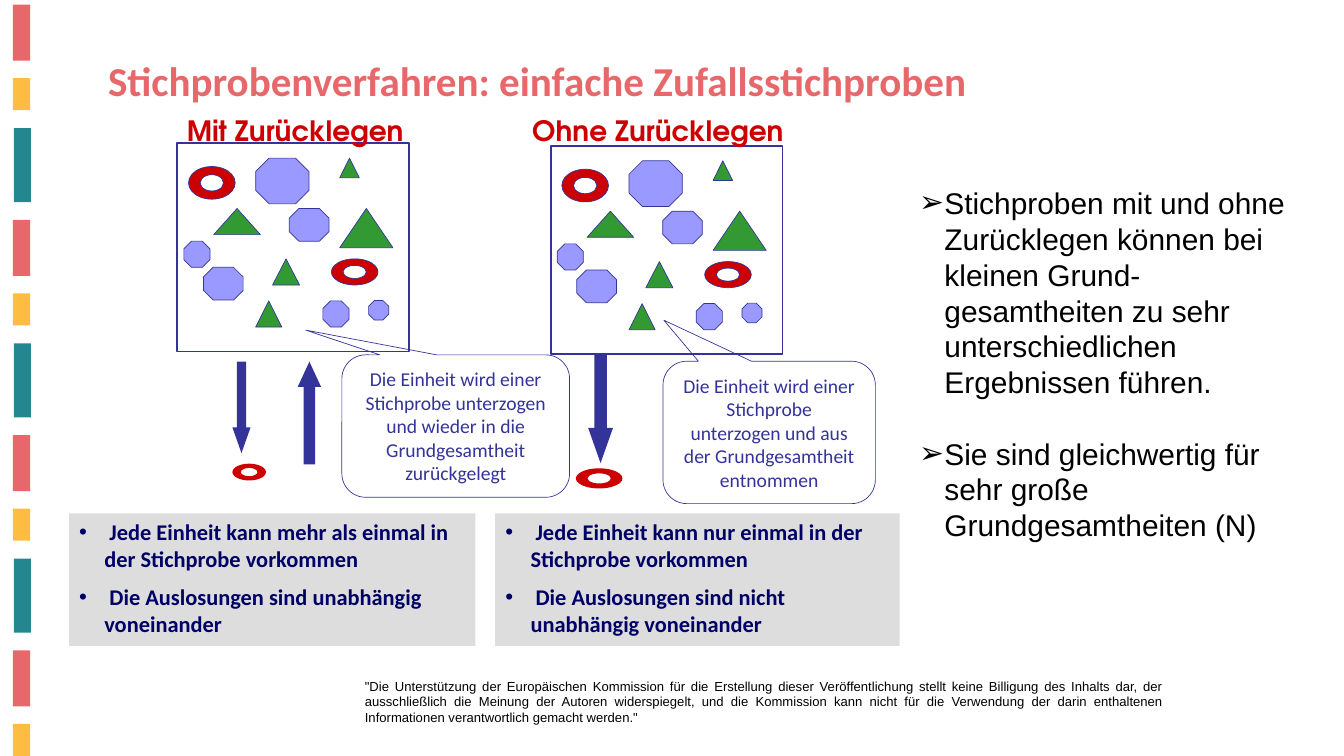
from pptx import Presentation
from pptx.dml.color import RGBColor
from pptx.enum.shapes import MSO_SHAPE as SHAPE
from pptx.enum.text import MSO_ANCHOR as ANCHOR, PP_ALIGN as ALIGN
from pptx.oxml.ns import qn
from pptx.util import Pt
from lxml import etree

CORAL, YELLOW, TEAL = "E8676A", "FDBD40", "238791"
INDIGO, NAVY, RED, GREEN, LILAC = "333399", "000066", "CC0000", "339933", "9999FF"

# Population units relative to its frame: left, top, width, height
TRIANGLES = [(102, 124, 29, 28), (39, 70, 50, 28), (84, 169, 28, 28),
             (174, 70, 57, 42), (174, 16, 21, 21)]
OCTAGONS = [(28, 133, 42.5, 35), (120, 70, 42.5, 35), (156, 169, 28, 28),
            (205, 168.5, 21.5, 21), (84, 16, 57, 49), (7, 105, 28, 28)]
RINGS = [(165, 124, 50, 28), (12, 25, 50, 35)]


def rgb(value):
    return RGBColor.from_string(value)


def paint(sp, fill=None, line=None, width=0.75):
    sp.shadow.inherit = False
    if fill:
        sp.fill.solid()
        sp.fill.fore_color.rgb = rgb(fill)
    else:
        sp.fill.background()
    if line:
        sp.line.color.rgb = rgb(line)
        sp.line.width = Pt(width)
    else:
        sp.line.fill.background()
    return sp


def add_shape(shapes, kind, box, fill=None, line=None, width=0.75, adj=()):
    sp = shapes.add_shape(kind, *map(Pt, box))
    for i, value in enumerate(adj):
        sp.adjustments[i] = value
    return paint(sp, fill, line, width)


def add_ring(shapes, box, line=None):
    """Ellipse with a concentric hole of half its size."""
    x, y, w, h = box
    rx, ry = w / 2, h / 2

    def quarters(scale, turn):
        steps = [(1, 0), (0, turn), (-1, 0), (0, -turn), (1, 0)]
        return [(Pt(x + rx + scale * rx * i), Pt(y + ry + scale * ry * j))
                for i, j in steps]

    outer, inner = quarters(1, 1), quarters(0.5, -1)
    fb = shapes.build_freeform(*outer[0])
    fb.add_line_segments(outer[1:], close=True)
    fb.move_to(*inner[0])
    fb.add_line_segments(inner[1:], close=True)
    sp = fb.convert_to_shape()
    # Bend the four sides of each contour into quarter arcs
    for i, side in enumerate(list(sp._element.iter(qn("a:lnTo")))):
        scale, turn = (1, 1) if i < 4 else (0.5, -1)
        arc = etree.Element(qn("a:arcTo"), wR=str(Pt(rx * scale)), hR=str(Pt(ry * scale)),
                            stAng=str(turn * i % 4 * 5400000), swAng=str(turn * 5400000))
        side.getparent().replace(side, arc)
    return paint(sp, RED, line)


def add_bullet(p, char, color, indent=27):
    pPr = p._p.get_or_add_pPr()
    pPr.set("marL", str(Pt(indent)))
    pPr.set("indent", str(-Pt(indent)))
    clr = etree.SubElement(pPr, qn("a:buClr"))
    etree.SubElement(clr, qn("a:srgbClr")).set("val", color)
    etree.SubElement(pPr, qn("a:buFont")).set("typeface", "Arial")
    etree.SubElement(pPr, qn("a:buChar")).set("char", char)


def write(sp, lines, font, size, color, bold=False, align=ALIGN.LEFT,
          inset=(7.2, 3.6), bullet=None, gap=0, anchor=ANCHOR.TOP):
    tf = sp.text_frame
    tf.word_wrap = True
    tf.vertical_anchor = anchor
    tf.margin_left = tf.margin_right = Pt(inset[0])
    tf.margin_top = tf.margin_bottom = Pt(inset[1])
    for i, line in enumerate(lines):
        p = tf.add_paragraph() if i else tf.paragraphs[0]
        p.text = line
        p.alignment = align
        if i:
            p.space_before = Pt(gap)
        if bullet:
            add_bullet(p, bullet, color)
        f = p.runs[0].font
        f.name, f.size, f.bold, f.color.rgb = font, Pt(size), bold, rgb(color)


def add_text(shapes, box, lines, *style, **options):
    write(shapes.add_textbox(*map(Pt, box)), lines, *style, **options)


def draw_stripes(shapes, x, y):
    # Four cycles of coral, yellow and teal; the last teal bar falls off the slide
    bars = [(CORAL, 0, 0, 60), (YELLOW, 0, 78.7, 34.4), (TEAL, 1, 132.2, 79.4)]
    for cycle in range(4):
        for color, dx, dy, h in bars:
            top = y + cycle * 230.6 + dy
            if top < 810:
                add_shape(shapes, SHAPE.RECTANGLE, (x + dx, top, 18.3, h), color)


def draw_population(shapes, x, y):
    group = shapes.add_group_shape().shapes
    add_shape(group, SHAPE.RECTANGLE, (x, y, 248.4, 223.2), line=INDIGO, width=2)
    for kind, color, units in ((SHAPE.ISOSCELES_TRIANGLE, GREEN, TRIANGLES),
                               (SHAPE.OCTAGON, LILAC, OCTAGONS)):
        for dx, dy, w, h in units:
            add_shape(group, kind, (x + dx, y + dy, w, h), color, INDIGO)
    for dx, dy, w, h in RINGS:
        add_ring(group, (x + dx, y + dy, w, h), INDIGO)


def draw_method(shapes, x, y, m):
    """One sampling method; all boxes in m are relative to x, y."""
    def at(box):
        return (x + box[0], y + box[1], *box[2:])

    draw_population(shapes, *at(m["population"]))
    # Drawn unit and the arrows to and from the sample
    for kind, head, box in m["arrows"]:
        add_shape(shapes, kind, at(box), INDIGO, adj=(0.5, head))
    add_ring(shapes, at(m["ring"]))
    # Explanation
    callout = add_shape(shapes, SHAPE.ROUNDED_RECTANGULAR_CALLOUT, at(m["callout"]),
                        line=INDIGO, adj=(*m["tip"], 0.167))
    write(callout, [m["note"]], "Calibri", 21, INDIGO, align=ALIGN.CENTER,
          inset=(10.8, 5), anchor=ANCHOR.MIDDLE)
    # Heading and consequences
    add_text(shapes, at(m["heading"]), [m["title"]], "TeX Gyre Adventor", 30, RED,
             bold=True, inset=(10.8, 5))
    panel = add_shape(shapes, SHAPE.RECTANGLE, at((0, 434, m["width"], 142)), "DDDDDD")
    write(panel, m["points"], "Calibri", 24, NAVY, bold=True, inset=(10.8, 5),
          bullet="•", gap=12)


WITH_REPLACEMENT = {
    "title": "Mit Zurücklegen", "heading": (115.4, 0.8, 308, 47.5),
    "population": (116, 37.4), "width": 435.3,
    "arrows": [(SHAPE.DOWN_ARROW, 1.417, (175, 271.5, 19.5, 98)),
               (SHAPE.UP_ARROW, 1.079, (245, 271.5, 25, 110))],
    "ring": (175, 380.8, 36, 18),
    "callout": (292.3, 264.2, 244, 152.6), "tip": (-0.659, -0.674),
    "note": "Die Einheit wird einer Stichprobe unterzogen und wieder in die "
            "Grundgesamtheit zurückgelegt",
    "points": [" Jede Einheit kann mehr als einmal in der Stichprobe vorkommen",
               " Die Auslosungen sind unabhängig voneinander"],
}
WITHOUT_REPLACEMENT = {
    "title": "Ohne Zurücklegen", "heading": (28.8, 0.8, 338, 47.5),
    "population": (59.4, 40.3), "width": 433.4,
    "arrows": [(SHAPE.DOWN_ARROW, 1.417, (99.6, 262.8, 26.6, 117.4))],
    "ring": (86.4, 385.8, 50, 21.6),
    "callout": (179.8, 271, 227.5, 152.6), "tip": (-0.496, -0.788),
    "note": "Die Einheit wird einer Stichprobe unterzogen und aus der "
            "Grundgesamtheit entnommen",
    "points": [" Jede Einheit kann nur einmal in der Stichprobe vorkommen",
               " Die Auslosungen sind nicht unabhängig voneinander"],
}
REMARKS = [
    "Stichproben mit und ohne Zurücklegen können bei kleinen Grund-gesamtheiten "
    "zu sehr unterschiedlichen Ergebnissen führen.",
    "Sie sind gleichwertig für sehr große Grundgesamtheiten (N)",
]
DISCLAIMER = (
    '"Die Unterstützung der Europäischen Kommission für die Erstellung dieser '
    "Veröffentlichung stellt keine Billigung des Inhalts dar, der ausschließlich die "
    "Meinung der Autoren widerspiegelt, und die Kommission kann nicht für die "
    'Verwendung der darin enthaltenen Informationen verantwortlich gemacht werden."'
)


def main():
    prs = Presentation()
    prs.slide_width, prs.slide_height = Pt(1440), Pt(810)
    shapes = prs.slides.add_slide(prs.slide_layouts[6]).shapes

    draw_stripes(shapes, 13.9, 5)
    add_text(shapes, (383.8, 723, 869.8, 58), [DISCLAIMER], "Arial", 14, "000000",
             align=ALIGN.JUSTIFY)
    draw_method(shapes, 74, 116, WITH_REPLACEMENT)
    draw_method(shapes, 530.6, 116, WITHOUT_REPLACEMENT)
    add_text(shapes, (977.8, 194.3, 428.4, 395), REMARKS, "Arial", 32, "000000",
             bullet="➢", gap=38)
    add_text(shapes, (108.7, 56, 1101.6, 60.5),
             ["Stichprobenverfahren: einfache Zufallsstichproben"],
             "Calibri", 44, "E7686A", bold=True)
    prs.save("out.pptx")


if __name__ == "__main__":
    main()
